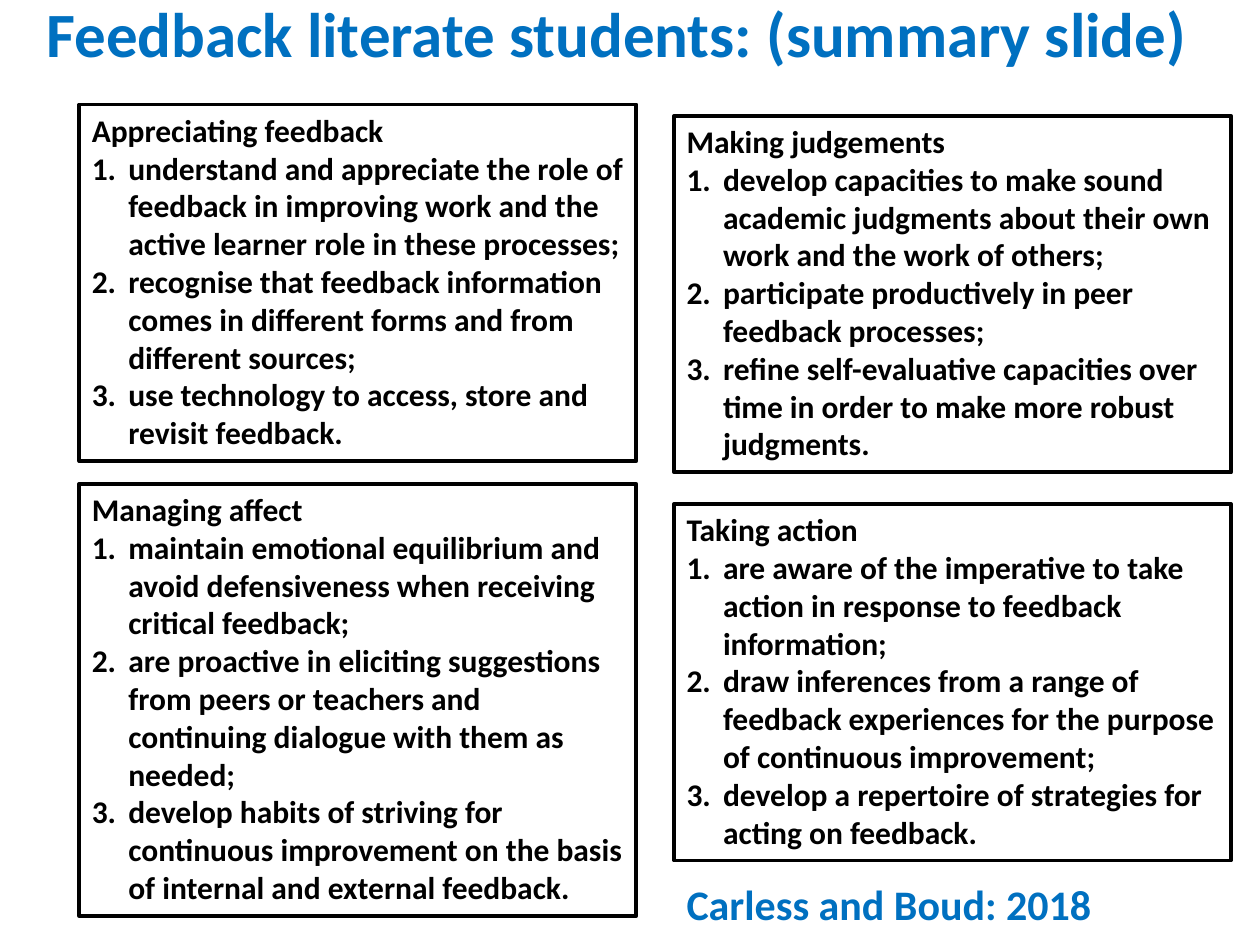
from lxml import etree
from pptx import Presentation
from pptx import util as u
from pptx.dml.color import RGBColor
from pptx.enum import shapes, text
from pptx.oxml.ns import qn

COLORS = {"ink": "000000", "blue": "0070C0"}
FONT = "Calibri"
LEFT, RIGHT, WIDTH = 0.63, 5.35, 4.42
INDENT = u.Inches(0.29)

PANELS = [
    (LEFT, 0.83, 2.83, "Appreciating feedback", [
        "understand and appreciate the role of feedback in improving work and the active learner role in these processes;",
        "recognise that feedback information comes in different forms and from different sources;",
        "use technology to access, store and revisit feedback."]),
    (RIGHT, 0.92, 2.83, "Making judgements", [
        "develop capacities to make sound academic judgments about their own work and the work of others;",
        "participate productively in peer feedback processes;",
        "refine self-evaluative capacities over time in order to make more robust judgments."]),
    (LEFT, 3.84, 3.43, "Managing affect", [
        "maintain emotional equilibrium and avoid defensiveness when receiving critical feedback;",
        "are proactive in eliciting suggestions from peers or teachers and continuing dialogue with them as needed;",
        "develop habits of striving for continuous improvement on the basis of internal and external feedback."]),
    (RIGHT, 4, 2.83, "Taking action", [
        "are aware of the imperative to take action in response to feedback information;",
        "draw inferences from a range of feedback experiences for the purpose of continuous improvement;",
        "develop a repertoire of strategies for acting on feedback."]),
]


def add_run(para, words, size, color):
    """Add one bold run to a left-aligned paragraph."""
    para.alignment = text.PP_ALIGN.LEFT
    run = para.add_run()
    run.text = words
    run.font.name = FONT
    run.font.size = u.Pt(size)
    run.font.bold = True
    run.font.color.rgb = RGBColor.from_string(COLORS[color])


def number(para):
    """Give a paragraph a hanging automatic number."""
    props = para._p.get_or_add_pPr()
    props.set("marL", str(INDENT))
    props.set("indent", str(-INDENT))
    etree.SubElement(props, qn("a:buFont"), typeface="+mj-lt")
    etree.SubElement(props, qn("a:buAutoNum"), type="arabicPeriod")


def add_label(slide, box, words, size, anchor):
    """Add a single line of blue text."""
    label = slide.shapes.add_textbox(*map(u.Inches, box))
    frame = label.text_frame
    frame.word_wrap = True
    frame.vertical_anchor = anchor
    add_run(frame.paragraphs[0], words, size, "blue")


def add_panel(slide, left, top, height, head, items):
    """Add an outlined box with a heading and a numbered list."""
    box = map(u.Inches, (left, top, WIDTH, height))
    panel = slide.shapes.add_shape(shapes.MSO_SHAPE.RECTANGLE, *box)
    panel.shadow.inherit = False
    panel.fill.background()
    panel.line.color.rgb = RGBColor.from_string(COLORS["ink"])
    panel.line.width = u.Pt(2.25)
    frame = panel.text_frame
    frame.word_wrap = True
    frame.auto_size = text.MSO_AUTO_SIZE.SHAPE_TO_FIT_TEXT
    frame.vertical_anchor = text.MSO_ANCHOR.TOP
    add_run(frame.paragraphs[0], head, 18, "ink")
    for item in items:
        para = frame.add_paragraph()
        number(para)
        add_run(para, item, 18, "ink")


def main():
    """Build and save the slide."""
    deck = Presentation()
    deck.slide_width, deck.slide_height = u.Inches(10), u.Inches(7.5)
    slide = deck.slides.add_slide(deck.slide_layouts[6])
    add_label(slide, (0.27, 0.21, 9.53, 0.4),
              "Feedback literate students: (summary slide)", 36, text.MSO_ANCHOR.BOTTOM)
    for panel in PANELS:
        add_panel(slide, *panel)
    add_label(slide, (RIGHT, 6.92, 4.21, 0.5),
              "Carless and Boud: 2018", 24, text.MSO_ANCHOR.TOP)
    deck.save("out.pptx")


if __name__ == "__main__":
    main()
